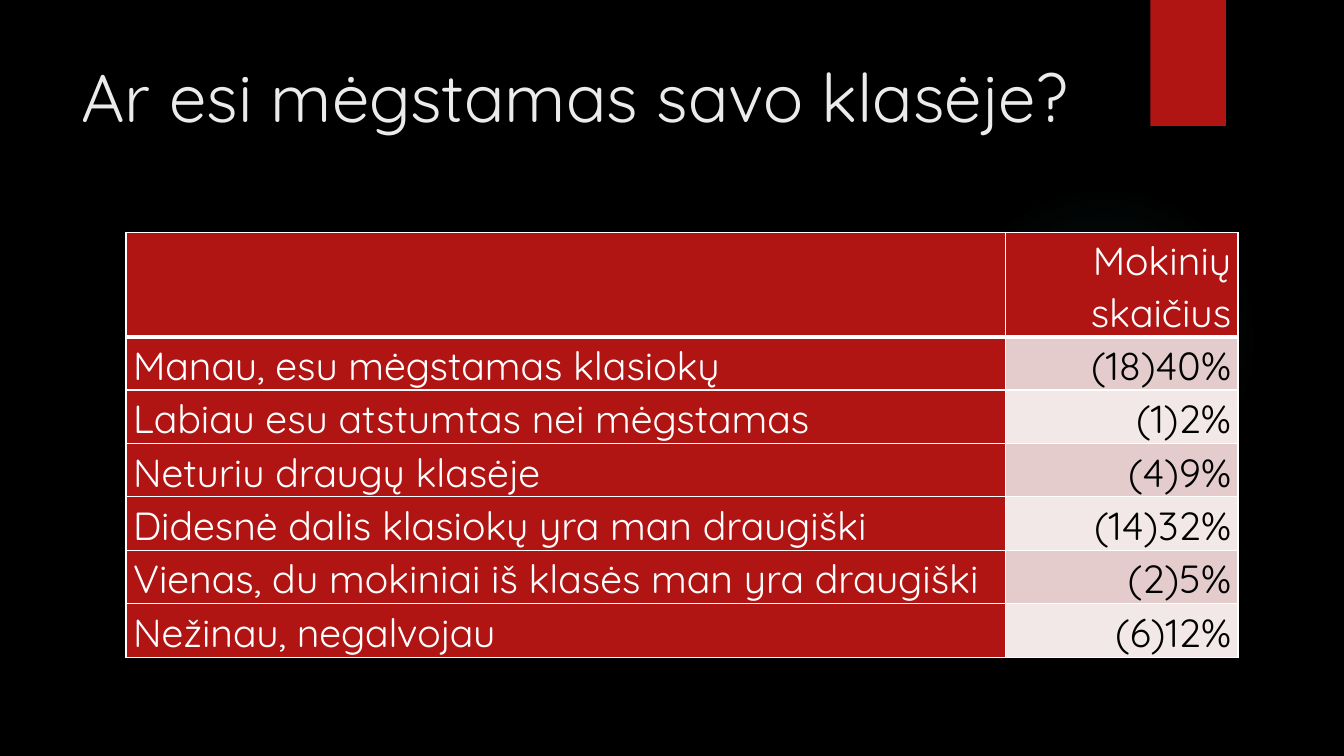
from lxml import etree
from pptx import Presentation
from pptx.dml.color import RGBColor
from pptx.enum.shapes import MSO_SHAPE
from pptx.enum.text import MSO_ANCHOR, PP_ALIGN
from pptx.oxml import parse_xml
from pptx.oxml.ns import nsdecls, qn
from pptx.util import Inches, Pt

LEFT, RIGHT = PP_ALIGN.LEFT, PP_ALIGN.RIGHT
TOP, BOTTOM = MSO_ANCHOR.TOP, MSO_ANCHOR.BOTTOM

TITLE = "Ar esi mėgstamas savo klasėje?"
HEADER = ("", "Mokinių skaičius")
ANSWERS = [
    ("Manau, esu mėgstamas klasiokų", "(18)40%"),
    ("Labiau esu atstumtas nei mėgstamas", "(1)2%"),
    ("Neturiu draugų klasėje", "(4)9%"),
    ("Didesnė dalis klasiokų yra man draugiški", "(14)32%"),
    ("Vienas, du mokiniai iš klasės man yra draugiški", "(2)5%"),
    ("Nežinau, negalvojau", "(6)12%"),
]

FONT = "Quicksand"
BLACK, WHITE, RED, PALE, TEAL = "000000", "FFFFFF", "B01513", "EBEBEB", "50B9C1"
BANDS = ("E4CCCC", "F2E8E7")
GLOW_STOPS = [(0, 7), (36, 6), (69, 0)]  # position %, opacity %
COLUMNS = (8.72, 2.31)
HEADER_HEIGHT, ROW_HEIGHT = 1.03, 0.53


def color(value):
    return RGBColor.from_string(value)


def write(tf, text, size, ink, align=LEFT, anchor=TOP, spacing=None, after=None):
    tf.word_wrap = True
    tf.vertical_anchor = anchor
    p = tf.paragraphs[0]
    p.alignment = align
    p.line_spacing = spacing
    if after is not None:
        p.space_after = Pt(after)
    r = p.add_run()
    r.text = text
    r.font.size, r.font.name = Pt(size), FONT
    r.font.color.rgb = color(ink)


def add_shape(s, kind, left, top, width, height, fill):
    sp = s.shapes.add_shape(kind, *map(Inches, (left, top, width, height)))
    sp.shadow.inherit = False
    sp.line.fill.background()
    sp.fill.solid()
    sp.fill.fore_color.rgb = color(fill)
    return sp


def add_glow(s):
    """Faint round light behind the table's upper right corner."""
    sp = add_shape(s, MSO_SHAPE.OVAL, 9.41, 1.83, 3.08, 3.08, TEAL)
    stops = "".join(
        f'<a:gs pos="{pos * 1000}"><a:srgbClr val="{TEAL}">'
        f'<a:alpha val="{alpha * 1000}"/></a:srgbClr></a:gs>'
        for pos, alpha in GLOW_STOPS)
    gradient = parse_xml(
        f'<a:gradFill {nsdecls("a")}><a:gsLst>{stops}</a:gsLst><a:path path="circle">'
        '<a:fillToRect l="50000" t="50000" r="50000" b="50000"/></a:path></a:gradFill>')
    pr = sp._element.spPr
    pr.replace(pr.find(qn("a:solidFill")), gradient)


def add_ribbon(s):
    sp = add_shape(s, MSO_SHAPE.RECTANGLE, 11.41, 0, 0.75, 1.25, RED)
    effects = sp._element.spPr.find(qn("a:effectLst"))
    shadow = etree.SubElement(effects, qn("a:outerShdw"), blurRad=str(Pt(3)),
                              dist=str(Pt(2)), dir="5400000", rotWithShape="0")
    ink = etree.SubElement(shadow, qn("a:srgbClr"), val=BLACK)
    etree.SubElement(ink, qn("a:alpha"), val="45000")


def set_borders(cell, **widths):
    pr = cell._tc.get_or_add_tcPr()
    for side in "LRTB":
        ln = etree.SubElement(pr, qn(f"a:ln{side}"), w=str(Pt(widths.get(side, 1))))
        fill = etree.SubElement(ln, qn("a:solidFill"))
        etree.SubElement(fill, qn("a:srgbClr"), val=WHITE)


def add_answer_table(s):
    rows = [HEADER] + ANSWERS
    heights = [HEADER_HEIGHT] + [ROW_HEIGHT] * len(ANSWERS)
    table = s.shapes.add_table(len(rows), len(COLUMNS), Inches(1.25), Inches(2.31),
                               Inches(sum(COLUMNS)), Inches(sum(heights))).table
    for column, width in zip(table.columns, COLUMNS):
        column.width = Inches(width)
    for i, (texts, height) in enumerate(zip(rows, heights)):
        table.rows[i].height = Inches(height)
        for j, text in enumerate(texts):
            cell = table.cell(i, j)
            is_value = i > 0 and j == 1
            if i == 0:
                set_borders(cell, B=3)
            elif i == 1:
                set_borders(cell, T=3)
            else:
                set_borders(cell)
            cell.fill.solid()
            cell.fill.fore_color.rgb = color(BANDS[(i - 1) % 2] if is_value else RED)
            cell.margin_left = cell.margin_right = Inches(0.07)
            cell.margin_top = cell.margin_bottom = 0
            cell.vertical_anchor = BOTTOM
            if text:
                write(cell.text_frame, text, 28, BLACK if is_value else WHITE,
                      align=RIGHT if j else LEFT, anchor=BOTTOM, spacing=1.07, after=8)


def main():
    prs = Presentation()
    prs.slide_width, prs.slide_height = Inches(13.33), Inches(7.5)
    s = prs.slides.add_slide(prs.slide_layouts[6])
    s.background.fill.solid()
    s.background.fill.fore_color.rgb = color(BLACK)
    add_glow(s)
    add_ribbon(s)
    title = s.shapes.add_textbox(*map(Inches, (0.71, 0.5, 10.29, 1.53)))
    write(title.text_frame, TITLE, 48, PALE)
    add_answer_table(s)
    prs.save("out.pptx")


if __name__ == "__main__":
    main()
